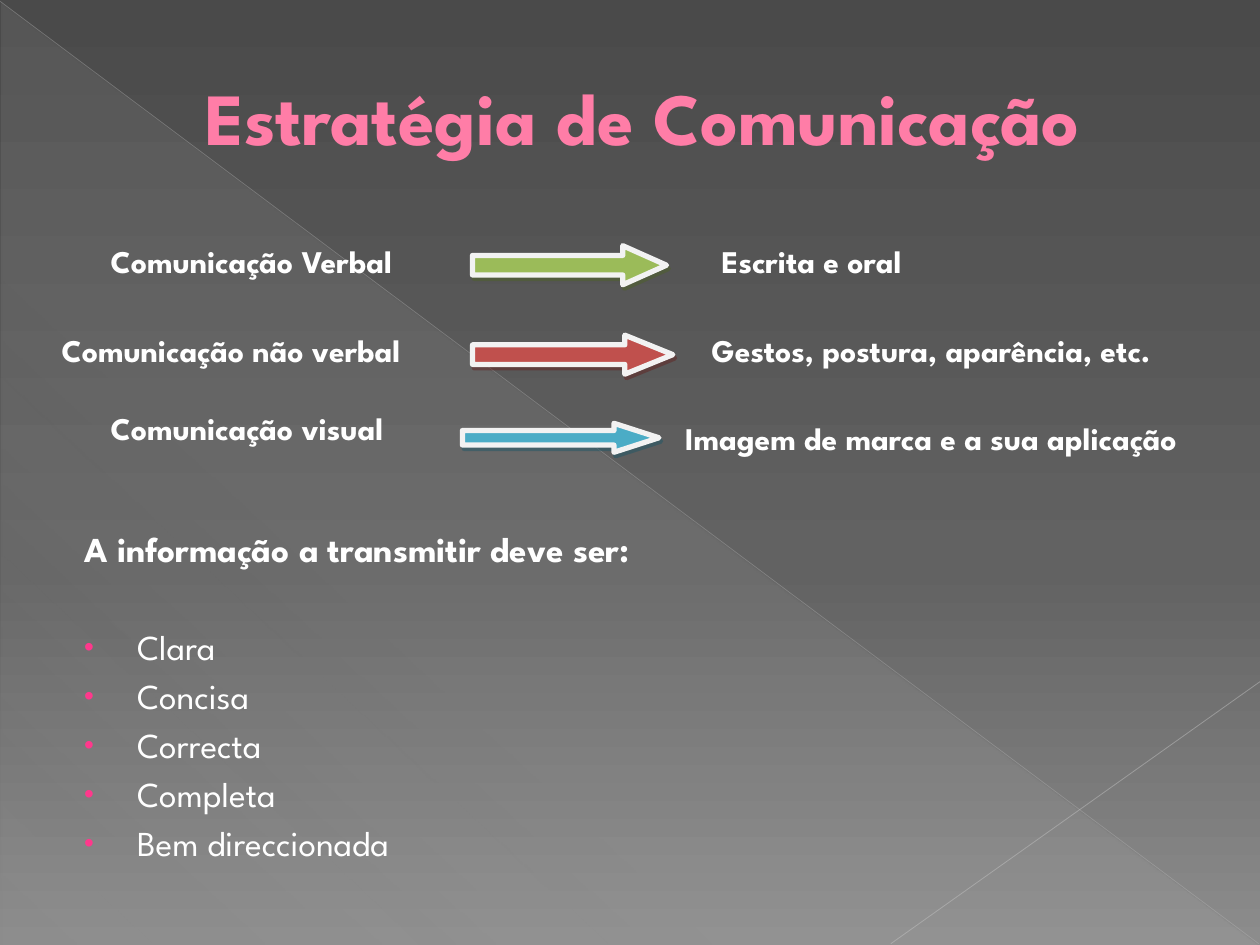
import lxml.etree
import pptx
import pptx.dml.color
import pptx.enum.shapes
import pptx.enum.text
import pptx.oxml
import pptx.oxml.ns
import pptx.util

NAMESPACE = pptx.oxml.ns.nsdecls("a")
qualified = pptx.oxml.ns.qn
rgb = pptx.dml.color.RGBColor.from_string
Pt = pptx.util.Pt

THEME = {
    "font": "League Spartan",
    "text": "FFFFFF",
    "title": "FF7DA7",
    "title_outline": "B12761",
    "bullet": "FF388C",
    "arrow_line": "F2F2F2",
    "triangle": "D2D2D2",
    "background": [(0, "4A4A4A", 100), (60, "626262", 100), (100, "8C8C8C", 100)],
    "title_size": 42,
    "body_size": 20,
    "label_size": 18,
}


def set_gradient(fill, element, stops, angle):
    fill.gradient()
    stop_xml = "".join(
        f'<a:gs pos="{position * 1000}"><a:srgbClr val="{color}">'
        f'<a:alpha val="{opacity * 1000}"/></a:srgbClr></a:gs>'
        for position, color, opacity in stops
    )
    gradient = element.find(".//" + qualified("a:gradFill"))
    gradient.getparent().replace(gradient, pptx.oxml.parse_xml(
        f'<a:gradFill {NAMESPACE} rotWithShape="1"><a:gsLst>{stop_xml}</a:gsLst>'
        f'<a:lin ang="{angle * 60000}" scaled="0"/></a:gradFill>'
    ))


def write_text(paragraph, text, size, color=THEME["text"], bold=True,
               before=0, margin=0, indent=0, bullet=None):
    properties = paragraph._p.get_or_add_pPr()
    properties.set("marL", str(int(margin)))
    properties.set("indent", str(int(indent)))
    if bullet:
        for tag, attributes in (("buSzPct", {"val": "80000"}), ("buFont", {"typeface": "Arial"}),
                                ("buChar", {"char": bullet})):
            lxml.etree.SubElement(properties, qualified("a:" + tag), attributes)
        properties.insert(0, pptx.oxml.parse_xml(
            f'<a:buClr {NAMESPACE}><a:srgbClr val="{THEME["bullet"]}"/></a:buClr>'))
    paragraph.space_before = Pt(before)
    run = paragraph.add_run()
    run.text = text
    run.font.name = THEME["font"]
    run.font.size = Pt(size)
    run.font.bold = bold
    run.font.color.rgb = rgb(color)
    return run


presentation = pptx.Presentation()
presentation.slide_width = pptx.util.Inches(10)
presentation.slide_height = pptx.util.Inches(7.5)
column = presentation.slide_width / 100
row = presentation.slide_height / 75
slide = presentation.slides.add_slide(presentation.slide_layouts[6])
set_gradient(slide.background.fill, slide.element, THEME["background"], 90)

triangle = slide.shapes.add_shape(
    pptx.enum.shapes.MSO_SHAPE.RIGHT_TRIANGLE,
    int(0.1 * column), int(0.2 * row), int(99.8 * column), int(74.8 * row))
triangle.shadow.inherit = False
triangle.line.fill.background()
set_gradient(triangle.fill, triangle.element,
             [(position, THEME["triangle"], opacity)
              for position, opacity in ((0, 10), (70, 8), (100, 1))], 133)

for start_x, start_y, end_x, end_y, color, width, opacity in (
    (0, 0.1, 99.9, 74.9, "BFBFBF", 0.39, 35),
    (100, 54.1, 70.7, 74.9, "C6C6C6", 0.47, 45),
):
    diagonal = slide.shapes.add_connector(
        pptx.enum.shapes.MSO_CONNECTOR.STRAIGHT,
        int(start_x * column), int(start_y * row), int(end_x * column), int(end_y * row))
    diagonal.line.width = Pt(width)
    diagonal.line.color.rgb = rgb(color)
    line_color = diagonal.element.spPr.find(".//" + qualified("a:srgbClr"))
    lxml.etree.SubElement(line_color, qualified("a:alpha"), val=str(opacity * 1000))
    lxml.etree.SubElement(diagonal.element.spPr, qualified("a:effectLst"))

title = slide.shapes.add_textbox(
    int(10 * column), int(1.6 * row), int(90 * column), int(15.3 * row))
title.text_frame.word_wrap = True
title.text_frame.vertical_anchor = pptx.enum.text.MSO_ANCHOR.MIDDLE
title_run = write_text(title.text_frame.paragraphs[0], "Estratégia de Comunicação",
                       size=THEME["title_size"], color=THEME["title"], margin=5.3 * column)
title_run.font._element.insert(0, pptx.oxml.parse_xml(
    f'<a:ln {NAMESPACE} w="6350"><a:solidFill>'
    f'<a:srgbClr val="{THEME["title_outline"]}"/></a:solidFill></a:ln>'))

body = slide.shapes.add_textbox(
    int(5 * column), int(41.4 * row), int(90 * column), int(32 * row))
body.text_frame.word_wrap = True
hanging = {"size": THEME["body_size"], "margin": 4.9 * column, "indent": -4.2 * column}
write_text(body.text_frame.paragraphs[0], "A informação a transmitir deve ser:", **hanging)
for index, quality in enumerate(("Clara", "Concisa", "Correcta", "Completa", "Bem direccionada")):
    write_text(body.text_frame.add_paragraph(), quality, bold=False, bullet="•",
               before=4 if index else 32, **hanging)

for labels, arrow_place, head_length, color, shadow_color in (
    ((("Comunicação Verbal", 7.8, 18.7, 29.3), ("Escrita e oral", 56.3, 18.7, 17.6)),
     (37.5, 19.5, 15.4, 3.1), 1.12, "9BBB59", "4E6128"),
    ((("Comunicação não verbal", 3.9, 25.8, 33.7),
      ("Gestos, postura, aparência, etc.", 55.5, 25.8, 41.1)),
     (37.5, 26.6, 15.9, 3.1), 1.23, "C0504D", "622423"),
    ((("Comunicação visual", 7.8, 32, 27.4),
      ("Imagem de marca e a sua aplicação", 53.4, 32.8, 46.6)),
     (36.7, 33.6, 15.6, 2.3), 1.55, "4BACC6", "205867"),
):
    left, top, width, height = arrow_place
    arrow = slide.shapes.add_shape(
        pptx.enum.shapes.MSO_SHAPE.RIGHT_ARROW,
        int(left * column), int(top * row), int(width * column), int(height * row))
    arrow.adjustments[0] = 0.5
    arrow.adjustments[1] = head_length
    arrow.fill.solid()
    arrow.fill.fore_color.rgb = rgb(color)
    arrow.line.color.rgb = rgb(THEME["arrow_line"])
    arrow.line.width = Pt(3)
    arrow.shadow.inherit = False
    effects = arrow.element.spPr.find(qualified("a:effectLst"))
    effects.append(pptx.oxml.parse_xml(
        f'<a:outerShdw {NAMESPACE} blurRad="0" dist="{Pt(2.2)}" dir="{63 * 60000}" algn="ctr" '
        f'rotWithShape="0"><a:srgbClr val="{shadow_color}"><a:alpha val="50000"/>'
        f'</a:srgbClr></a:outerShdw>'))
    for text, left, top, width in labels:
        label = slide.shapes.add_textbox(
            int(left * column), int(top * row), int(width * column), int(4 * row))
        label.text_frame.word_wrap = False
        label.text_frame.auto_size = pptx.enum.text.MSO_AUTO_SIZE.SHAPE_TO_FIT_TEXT
        write_text(label.text_frame.paragraphs[0], text, size=THEME["label_size"])

presentation.save("out.pptx")
